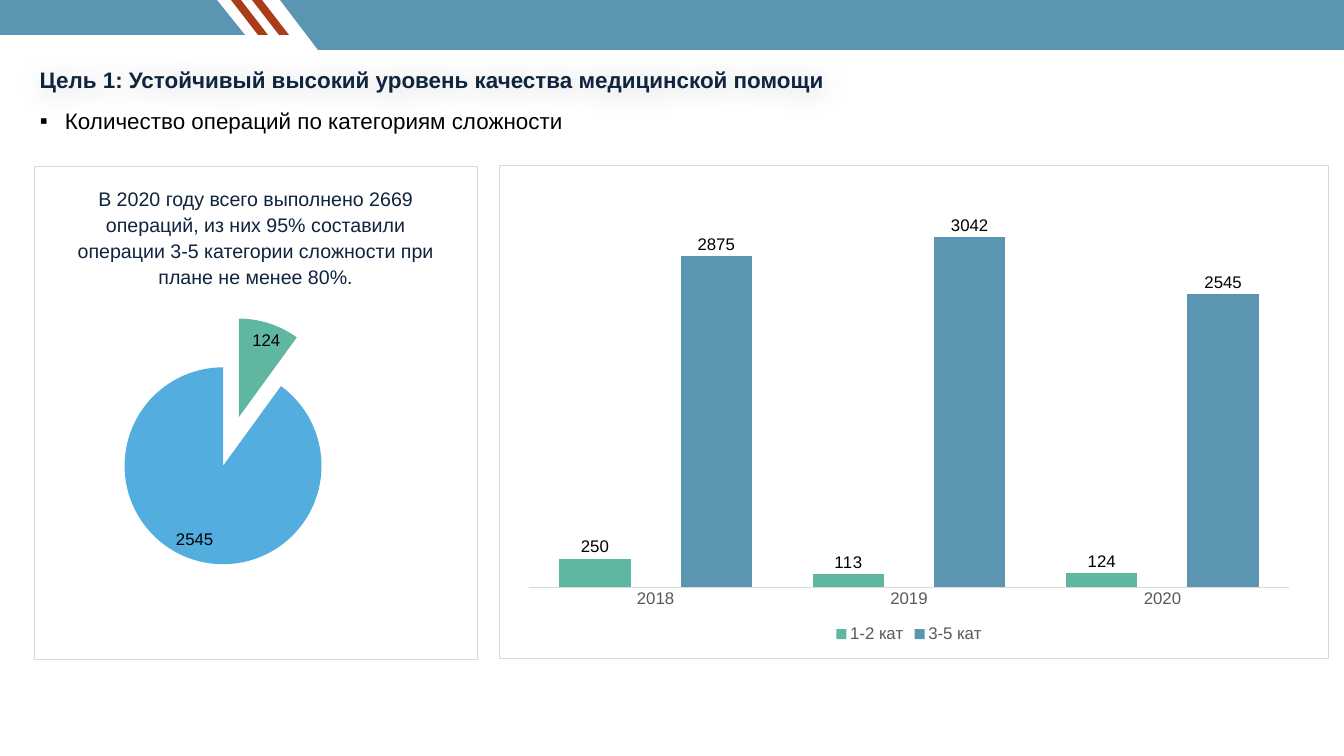
from lxml import etree
from pptx import Presentation
from pptx.chart.data import CategoryChartData
from pptx.dml.color import RGBColor
from pptx.enum.chart import XL_CHART_TYPE, XL_LABEL_POSITION, XL_LEGEND_POSITION, XL_TICK_MARK
from pptx.enum.shapes import MSO_SHAPE
from pptx.enum.text import MSO_ANCHOR, PP_ALIGN
from pptx.oxml import parse_xml
from pptx.oxml.ns import nsdecls, qn
from pptx.util import Pt

PX = 18143  # EMU in one px
WIDTH, HEIGHT = 1344, 756
STEEL, RUST, GREEN, SKY = "5A95B2", "AB3C19", "5FB7A1", "54ADDF"
NAVY, BLACK, GREY, PALE = "0F243E", "000000", "595959", "D9D9D9"


def px(*lengths):
    return [length * PX for length in lengths]


def rgb(code):
    return RGBColor.from_string(code)


def style_font(font, size, color, bold=False):
    font.name, font.size, font.bold = "Arial", Pt(size), bold
    font.color.rgb = rgb(color)


def add_band(slide, color, points):
    builder = slide.shapes.build_freeform(*points[0], scale=PX)
    builder.add_line_segments(points[1:], close=True)
    band = builder.convert_to_shape()
    band.fill.solid()
    band.fill.fore_color.rgb = rgb(color)
    band.line.fill.background()
    band.shadow.inherit = False


def add_header(slide, left, top, width):
    """Two slanted bands with two stripes between them."""
    right = left + width
    add_band(slide, STEEL, [(right, top), (left + 280, top), (left + 318, top + 50), (right, top + 50)])
    add_band(slide, STEEL, [(left, top), (left + 217, top), (left + 245, top + 35), (left, top + 35)])
    for stripe in (left + 252, left + 231):
        add_band(slide, RUST, [(stripe, top), (stripe + 10, top),
                               (stripe + 37, top + 35), (stripe + 27, top + 35)])


def add_frame(slide, left, top, width, height):
    frame = slide.shapes.add_shape(MSO_SHAPE.RECTANGLE, *px(left, top, width, height))
    frame.fill.background()
    frame.line.color.rgb = rgb(PALE)
    frame.line.width = Pt(0.25)
    frame.shadow.inherit = False


def write(shape, text, size, color, align=PP_ALIGN.LEFT, anchor=MSO_ANCHOR.MIDDLE,
          spacing=1.0, bold=False):
    frame = shape.text_frame
    frame.word_wrap, frame.vertical_anchor = True, anchor
    paragraph = frame.paragraphs[0]
    paragraph.text = text
    paragraph.alignment, paragraph.line_spacing = align, spacing
    style_font(paragraph.font, size, color, bold)
    return paragraph


def add_headings(slide, left, top, width):
    title = slide.shapes.add_shape(MSO_SHAPE.ROUNDED_RECTANGLE, *px(left, top, width, 68))
    title.adjustments[0] = 0.03
    title.fill.background()
    title.line.fill.background()
    title.shadow.inherit = False
    title._element.spPr.find(qn("a:effectLst")).append(parse_xml(
        f'<a:outerShdw {nsdecls("a")} blurRad="{25 * PX}" dist="{2 * PX}" dir="5400000">'
        '<a:srgbClr val="000000"><a:alpha val="20000"/></a:srgbClr></a:outerShdw>'))
    write(title, "Цель 1: Устойчивый высокий уровень качества медицинской помощи", 32, NAVY, bold=True)

    subtitle = slide.shapes.add_textbox(*px(left + 1, top + 42, width - 174, 63))
    paragraph = write(subtitle, "Количество операций по категориям сложности", 32, BLACK,
                      align=PP_ALIGN.JUSTIFY, spacing=1.1)
    properties = paragraph._p.get_or_add_pPr()
    properties.set("marL", str(25 * PX))
    properties.set("indent", str(-25 * PX))
    font_mark = etree.Element(qn("a:buFont"), typeface="Arial")
    bullet = etree.Element(qn("a:buChar"), char="▪")
    properties.find(qn("a:lnSpc")).addnext(font_mark)
    font_mark.addnext(bullet)


def place_plot(chart, x, y, w, h):
    """Fix the inner plot area, in fractions of the chart."""
    plot_area = chart._chartSpace.chart.plotArea
    for layout in plot_area.findall(qn("c:layout")):
        plot_area.remove(layout)
    plot_area.insert(0, parse_xml(
        f'<c:layout {nsdecls("c")}><c:manualLayout><c:layoutTarget val="inner"/>'
        '<c:xMode val="edge"/><c:yMode val="edge"/>'
        f'<c:x val="{x}"/><c:y val="{y}"/><c:w val="{w}"/><c:h val="{h}"/>'
        '</c:manualLayout></c:layout>'))


def add_chart(slide, kind, box, categories, series):
    data = CategoryChartData()
    data.categories = categories
    for name, values in series:
        data.add_series(name, values)
    chart = slide.shapes.add_chart(kind, *px(*box), data).chart
    chart.has_title = False
    style_font(chart.font, 24, BLACK)
    return chart


def show_values(series, position):
    labels = series.data_labels
    labels.show_value = True
    labels.position = position
    style_font(labels.font, 24, BLACK)


def add_share_panel(slide, left, top, width, height):
    add_frame(slide, left, top, width, height)
    summary = slide.shapes.add_textbox(*px(left + 28, top + 16, 387, 117))
    write(summary, "В 2020 году всего выполнено 2669 операций, из них 95% составили операции "
                   "3-5 категории сложности при плане не менее 80%.",
          28, NAVY, align=PP_ALIGN.CENTER, anchor=MSO_ANCHOR.TOP, spacing=1.1)

    chart = add_chart(slide, XL_CHART_TYPE.PIE, (left - 13, top + 126, 420, 282),
                      ["1", "2"], [("Series 1", (267, 2402))])
    chart.has_legend = False
    chart.plots[0].vary_by_categories = True
    place_plot(chart, 0.2, 0.09, 0.6, 0.88)
    shares = chart.plots[0].series[0]
    show_values(shares, XL_LABEL_POSITION.BEST_FIT)
    for index, (color, caption) in enumerate([(GREEN, "124"), (SKY, "2545")]):
        point = shares.points[index]
        point.format.fill.solid()
        point.format.fill.fore_color.rgb = rgb(color)
        label = point.data_label
        label.text_frame.text = caption
        style_font(label.text_frame.paragraphs[0].runs[0].font, 24, BLACK)
        label.position = XL_LABEL_POSITION.BEST_FIT
    explosion = etree.Element(qn("c:explosion"), val="26")
    shares._element.find(qn("c:dPt")).addprevious(explosion)


def add_years_panel(slide, left, top, width, height):
    add_frame(slide, left, top, width, height)
    chart = add_chart(slide, XL_CHART_TYPE.COLUMN_CLUSTERED, (left + 14, top + 10, 792, 472),
                      ["2018", "2019", "2020"],
                      [("1-2 кат", (250, 113, 124)), ("3-5 кат", (2875, 3042, 2545))])
    columns = chart.plots[0]
    columns.gap_width, columns.overlap = 85, -70
    columns.vary_by_categories = False
    for series, color in zip(columns.series, (GREEN, STEEL)):
        series.format.fill.solid()
        series.format.fill.fore_color.rgb = rgb(color)
        show_values(series, XL_LABEL_POSITION.OUTSIDE_END)

    counts, years = chart.value_axis, chart.category_axis
    counts.has_major_gridlines = counts.visible = False
    years.major_tick_mark = years.minor_tick_mark = XL_TICK_MARK.NONE
    years.format.line.color.rgb = rgb(PALE)
    years.format.line.width = Pt(0.75)
    style_font(years.tick_labels.font, 24, GREY)
    chart.has_legend = True
    chart.legend.position = XL_LEGEND_POSITION.BOTTOM
    chart.legend.include_in_layout = False
    style_font(chart.legend.font, 24, GREY)


def main():
    deck = Presentation()
    deck.slide_width, deck.slide_height = px(WIDTH, HEIGHT)
    slide = deck.slides.add_slide(deck.slide_layouts[6])
    add_header(slide, 0, 0, WIDTH)
    add_headings(slide, 34, 46, 898)
    add_share_panel(slide, 34, 166, 443, 493)
    add_years_panel(slide, 499, 165, 829, 493)
    deck.save("out.pptx")


if __name__ == "__main__":
    main()
